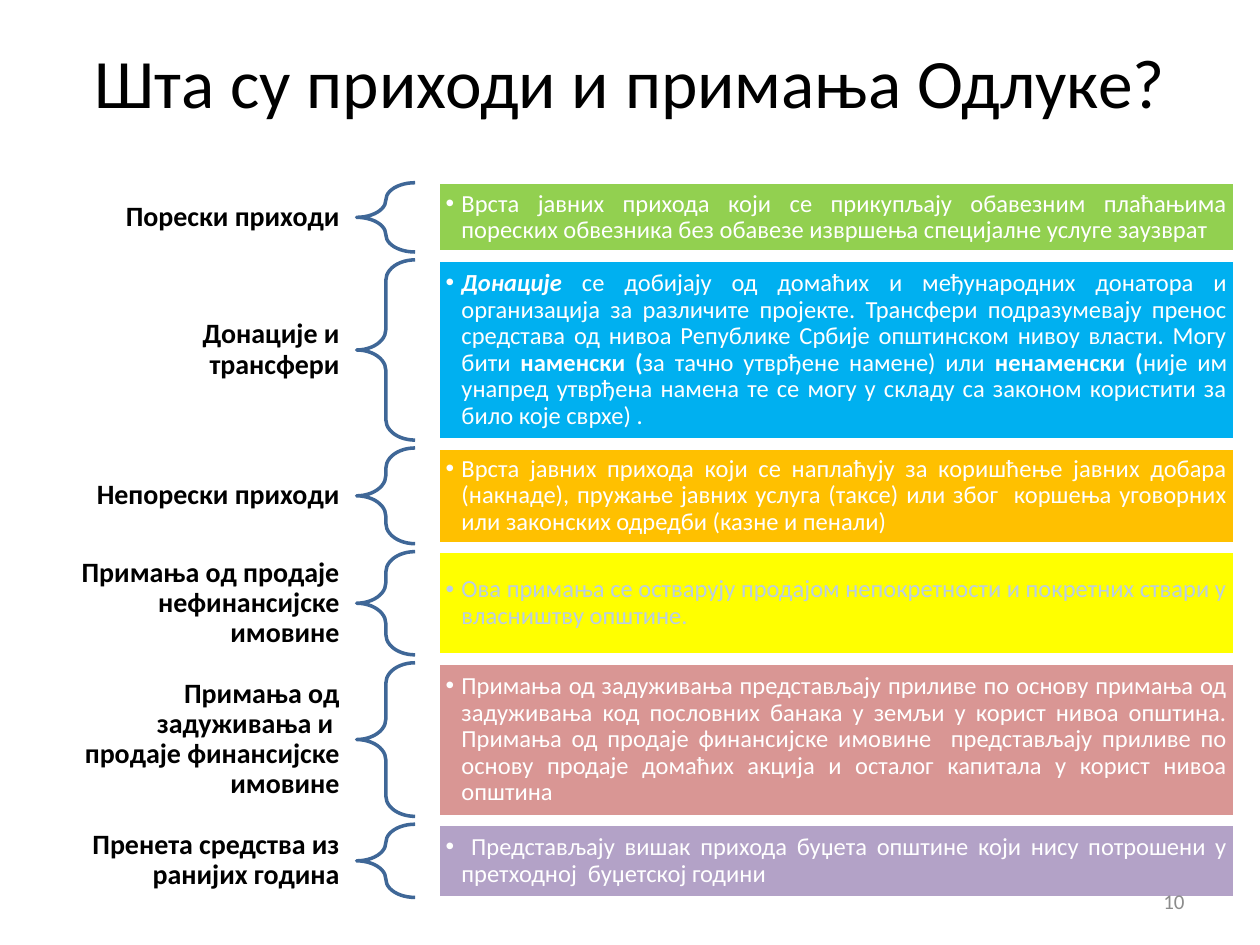
from pptx import Presentation
from pptx.dml.color import RGBColor
from pptx.enum.shapes import MSO_SHAPE
from pptx.enum.text import MSO_ANCHOR, MSO_AUTO_SIZE, PP_ALIGN
from pptx.util import Pt
from lxml.etree import SubElement
from pptx.oxml.ns import qn

TITLE = "Шта су приходи и примања Одлуке?"
PAGE_NUMBER = "10"
COLORS = {
    "black": "000000", "white": "FFFFFF", "gray": "8C8C8C", "brace": "3F6797",
    "green": "92D050", "blue": "00B0F0", "orange": "FFC000", "yellow": "FFFF00",
    "rose": "D99694", "purple": "B3A2C7", "pale": "B9CDE5",
}
# label, label lines, row height, fill, text colour, spans of (text, bold, italic)
ROWS = [
    ("Порески приходи", 1, 39.6, "green", "white", [
        ("Врста јавних прихода који се прикупљају обавезним плаћањима пореских "
         "обвезника без обавезе извршења специјалне услуге заузврат", False, False)]),
    ("Донације и трансфери", 2, 103, "blue", "white", [
        ("Донације ", True, True),
        ("се добијају од домаћих и међународних донатора и организација за различите "
         "пројекте. Трансфери подразумевају пренос средстава од нивоа Републике Србије "
         "општинском нивоу власти. Могу бити ", False, False),
        ("наменски (", True, False),
        ("за тачно утврђене намене) или ", False, False),
        ("ненаменски (", True, False),
        ("није им унапред утврђена намена те се могу у складу са законом користити "
         "за било које сврхе) .", False, False)]),
    ("Непорески приходи", 1, 54.7, "orange", "white", [
        ("Врста јавних прихода који се наплаћују за коришћење јавних добара (накнаде), "
         "пружање јавних услуга (таксе) или због  коршења уговорних или законских "
         "одредби (казне и пенали)", False, False)]),
    ("Примања од продаје нефинансијске имовине", 3, 59, "yellow", "pale", [
        ("Ова примања се остварују продајом непокретности и покретних ствари у "
         "власништву општине.", False, False)]),
    ("Примања од задуживања и  продаје финансијске имовине", 4, 87.8, "rose", "white", [
        ("Примања од задуживања представљају приливе по основу примања од задуживања "
         "код пословних банака у земљи у корист нивоа општина. Примања од продаје "
         "финансијске имовине  представљају приливе по основу продаје домаћих акција "
         "и осталог капитала у корист нивоа општина", False, False)]),
    ("Пренета средства из ранијих година", 2, 41.8, "purple", "white", [
        (" Представљају вишак прихода буџета општине који нису потрошени у "
         "претходној  буџетској години", False, False)]),
]
TOP, GAP = 104.4, 4.5
LABEL_LEFT, LABEL_WIDTH = 36, 167
BRACE_LEFT, BRACE_WIDTH = 203.8, 33.4
BAR_LEFT, BAR_WIDTH = 250.5, 455


def color(name):
    return RGBColor.from_string(COLORS[name])


def set_frame(shape, side, edge):
    frame = shape.text_frame
    frame.word_wrap = True
    frame.auto_size = MSO_AUTO_SIZE.NONE
    frame.vertical_anchor = MSO_ANCHOR.MIDDLE
    frame.margin_left = frame.margin_right = Pt(side)
    frame.margin_top = frame.margin_bottom = Pt(edge)
    return frame.paragraphs[0]


def style(para, size, name, align, bold=None):
    para.alignment = align
    para.font.name = "Calibri"
    para.font.size = Pt(size)
    para.font.bold = bold
    para.font.color.rgb = color(name)


def add_text(page, text, left, top, width, height, side, edge, size, name, bold=None):
    box = page.shapes.add_textbox(Pt(left), Pt(top), Pt(width), Pt(height))
    para = set_frame(box, side, edge)
    para.text = text
    style(para, size, name, PP_ALIGN.RIGHT, bold)
    return para


def add_preset(page, kind, left, top, width, height, line):
    shape = page.shapes.add_shape(kind, Pt(left), Pt(top), Pt(width), Pt(height))
    shape.shadow.inherit = False
    shape.line.color.rgb = color(line)
    shape.line.width = Pt(2)
    return shape


def add_bullet(para, indent):
    properties = para._p.get_or_add_pPr()
    properties.set("marL", str(Pt(indent)))
    properties.set("indent", str(-Pt(indent)))
    SubElement(properties, qn("a:buFont"), typeface="Arial")
    SubElement(properties, qn("a:buChar"), char="•")


def add_row(page, top, label, lines, height, fill, text_color, spans):
    label_height = 8 + 17 * lines
    label_top = top + (height - label_height) / 2
    para = add_text(page, label, LABEL_LEFT, label_top, LABEL_WIDTH, label_height,
                    8.96, 3.2, 16, "black", True)
    para.line_spacing = 0.9

    brace = add_preset(page, MSO_SHAPE.LEFT_BRACE, BRACE_LEFT, top, BRACE_WIDTH, height, "brace")
    brace.fill.background()
    brace.adjustments[0] = 0.35

    bar = add_preset(page, MSO_SHAPE.RECTANGLE, BAR_LEFT, top, BAR_WIDTH, height, "white")
    bar.fill.solid()
    bar.fill.fore_color.rgb = color(fill)
    para = set_frame(bar, 4.2, 4.2)
    para.line_spacing = 0.9
    add_bullet(para, 9)
    style(para, 14, text_color, PP_ALIGN.JUSTIFY)
    for text, bold, italic in spans:
        span = para.add_run()
        span.text = text
        if bold:
            span.font.bold = True
        if italic:
            span.font.italic = True


def main():
    deck = Presentation()
    deck.slide_width, deck.slide_height = Pt(720), Pt(540)
    page = deck.slides.add_slide(deck.slide_layouts[5])

    title = page.shapes.title
    title.left, title.top, title.width, title.height = Pt(36), Pt(21.6), Pt(648), Pt(49)
    para = set_frame(title, 7.2, 3.6)
    para.text = TITLE
    style(para, 39.6, "black", PP_ALIGN.CENTER)

    top = TOP
    for row in ROWS:
        add_row(page, top, *row)
        top += row[2] + GAP

    add_text(page, PAGE_NUMBER, 516, 500.5, 168, 28.8, 7.2, 3.6, 12, "gray")
    deck.save("out.pptx")


if __name__ == "__main__":
    main()
